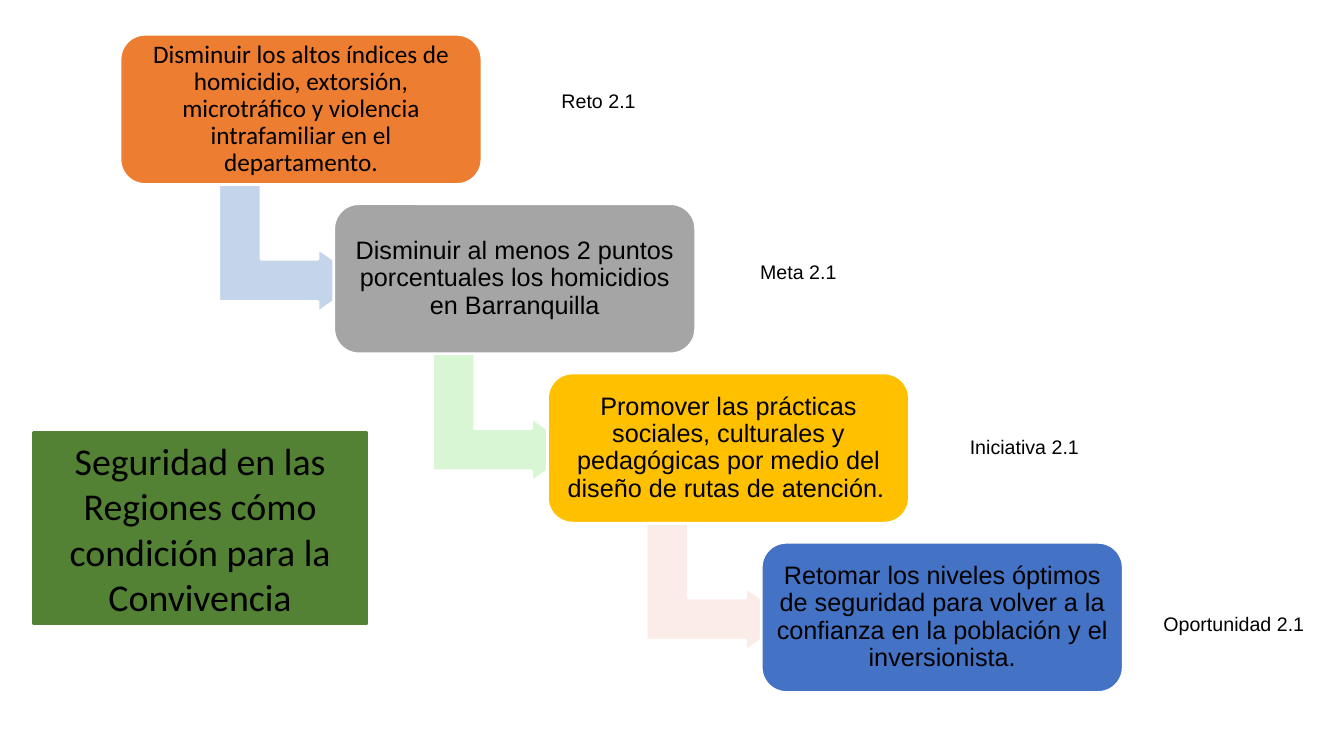
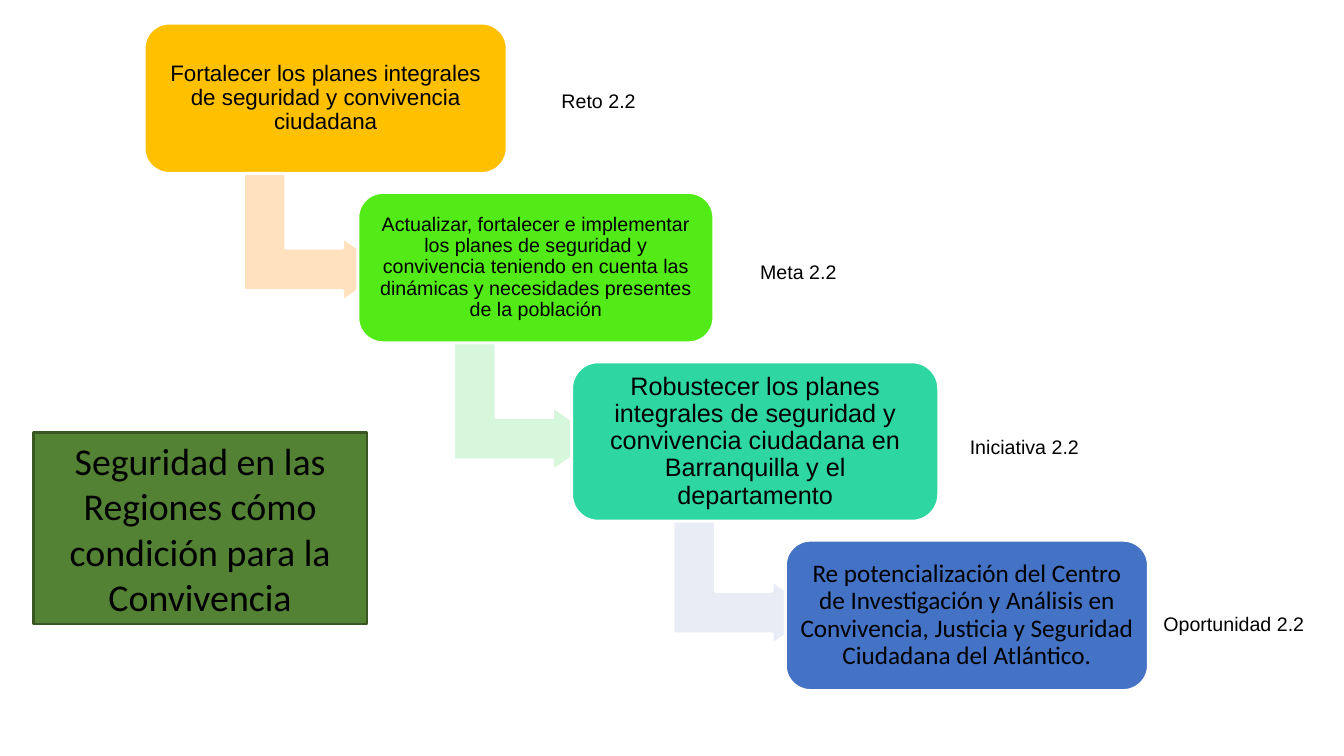
from pptx import Presentation
from pptx.dml.color import RGBColor
from pptx.enum.shapes import MSO_SHAPE
from pptx.enum.text import MSO_ANCHOR, MSO_AUTO_SIZE, PP_ALIGN
from pptx.util import Inches, Pt

BOX, BENT = MSO_SHAPE.ROUNDED_RECTANGLE, MSO_SHAPE.BENT_UP_ARROW
MIDDLE, CENTER = MSO_ANCHOR.MIDDLE, PP_ALIGN.CENTER
FIT, FIXED = MSO_AUTO_SIZE.SHAPE_TO_FIT_TEXT, MSO_AUTO_SIZE.NONE

HEX = {
    "black": "000000", "white": "FFFFFF", "green": "548235", "forest": "385723",
    "orange": "ED7D31", "gray": "A5A5A5", "gold": "FFC000", "blue": "4472C4",
    "lime": "53EB17", "teal": "2ED7A1", "sky": "C4D5EB", "mint": "D8F5D4",
    "blush": "FCECE8", "peach": "FFE2BD", "leaf": "D6F7DB", "mist": "E9ECF5",
}

TOPIC = "Seguridad en las Regiones cómo condición para la Convivencia"
TAGS = [("Reto", 5.47, 0.83, 0.94), ("Meta", 7.44, 2.53, 0.96),
        ("Iniciativa", 9.52, 4.27, 1.29), ("Oportunidad", 11.44, 6.02, 1.6)]

STEP, GAP = 2.12, 0.19          # across, and between one box and the next below
ARROW = (1.27, 1.44)
SHIFT = (-0.73, 0.66)           # arrow's corner from the middle of its box

# Each step: fill, arrow colour, (width, height), size, runs of (text, font)
SLIDES = [
    {"no": "2.1", "edge": "green", "start": (1.19, 0.34), "steps": [
        ("orange", "sky", (3.59, 1.49), 18, [
            ("Disminuir los altos índices de homicidio, extorsión, microtráfico "
             "y violencia intrafamiliar en el departamento.", "Calibri")]),
        ("gray", "mint", (3.59, 1.49), 18, [
            ("Disminuir al menos 2 puntos porcentuales los homicidios "
             "en Barranquilla", "Arial")]),
        ("gold", "blush", (3.59, 1.49), 18, [
            ("Promover las prácticas sociales, culturales y pedagógicas por medio "
             "del diseño de rutas de atención", "Arial"), (". ", "Calibri")]),
        ("blue", None, (3.59, 1.49), 18, [
            ("Retomar los niveles óptimos de seguridad para volver a la confianza "
             "en la población y el inversionista.", "Arial")]),
    ]},
    {"no": "2.2", "edge": "forest", "start": (1.43, 0.23), "steps": [
        ("gold", "peach", (3.6, 1.49), 16, [
            ("Fortalecer los planes integrales de seguridad y convivencia "
             "ciudadana", "Arial")]),
        ("lime", "leaf", (3.53, 1.49), 14, [
            ("Actualizar, fortalecer e implementar los planes de seguridad y "
             "convivencia teniendo en cuenta las dinámicas y necesidades "
             "presentes de la población", "Arial")]),
        ("teal", "mist", (3.64, 1.58), 18, [
            ("Robustecer los planes integrales de seguridad y convivencia "
             "ciudadana en Barranquilla y el departamento", "Arial")]),
        ("blue", None, (3.6, 1.49), 18, [
            ("Re potencialización del Centro de Investigación y Análisis en "
             "Convivencia, Justicia y Seguridad Ciudadana del Atlántico.",
             "Calibri")]),
    ]},
]


def color(name):
    return RGBColor.from_string(HEX[name])


def paint(shape, fill, edge):
    shape.fill.solid()
    shape.fill.fore_color.rgb = color(fill)
    shape.line.color.rgb = color(edge)
    shape.line.width = Pt(2)
    shape.shadow.inherit = False


def write(par, runs, size):
    for text, face in runs:
        run = par.add_run()
        run.text = text
        run.font.size, run.font.name = Pt(size), face
        run.font.color.rgb = color("black")


def place(slide, kind, left, top, size, fill):
    shape = slide.shapes.add_shape(kind, *map(Inches, (left, top, *size)))
    paint(shape, fill, "white")
    return shape


def add_arrow(slide, left, top, fill):
    arrow = place(slide, BENT, left, top, ARROW, fill)
    arrow.rotation = 90
    for i, share in enumerate((0.33, 0.25, 0.36)):
        arrow.adjustments[i] = share


def add_box(slide, left, top, dims, fill, size, runs):
    box = place(slide, BOX, left, top, dims, fill)
    frame = box.text_frame
    frame.word_wrap, frame.vertical_anchor = True, MIDDLE
    frame.margin_left = frame.margin_right = Inches(0.07)
    frame.margin_top = frame.margin_bottom = Inches(0.07)
    par = frame.paragraphs[0]
    par.alignment, par.line_spacing = CENTER, 0.9
    write(par, runs, size)


def add_stairs(slide, start, steps):
    """Boxes going down to the right, each with a bent arrow to the next."""
    left, top = start
    for fill, tint, dims, size, runs in steps:
        if tint:
            add_arrow(slide, left + dims[0] / 2 + SHIFT[0],
                      top + dims[1] / 2 + SHIFT[1], tint)
        add_box(slide, left, top, dims, fill, size, runs)
        left, top = left + STEP, top + dims[1] + GAP


def add_tags(slide, no):
    for word, left, top, wide in TAGS:
        tag = slide.shapes.add_textbox(*map(Inches, (left, top, wide, 0.34)))
        tag.text_frame.word_wrap = False
        tag.text_frame.auto_size = FIT
        write(tag.text_frame.paragraphs[0], [(f"{word} {no}", "Arial")], 14)


def set_topic(slide, edge):
    title = slide.shapes.title
    title.left, title.top, title.width, title.height = map(
        Inches, (0.33, 4.29, 3.31, 1.9))
    paint(title, "green", edge)
    frame = title.text_frame
    frame.word_wrap, frame.auto_size, frame.vertical_anchor = True, FIXED, MIDDLE
    frame.paragraphs[0].alignment = CENTER
    write(frame.paragraphs[0], [(TOPIC, "Calibri")], 27)


def main():
    deck = Presentation()
    deck.slide_width, deck.slide_height = Inches(13.33), Inches(7.5)
    for page in SLIDES:
        slide = deck.slides.add_slide(deck.slide_layouts[5])
        set_topic(slide, page["edge"])
        add_stairs(slide, page["start"], page["steps"])
        add_tags(slide, page["no"])
    deck.save("out.pptx")


if __name__ == "__main__":
    main()
